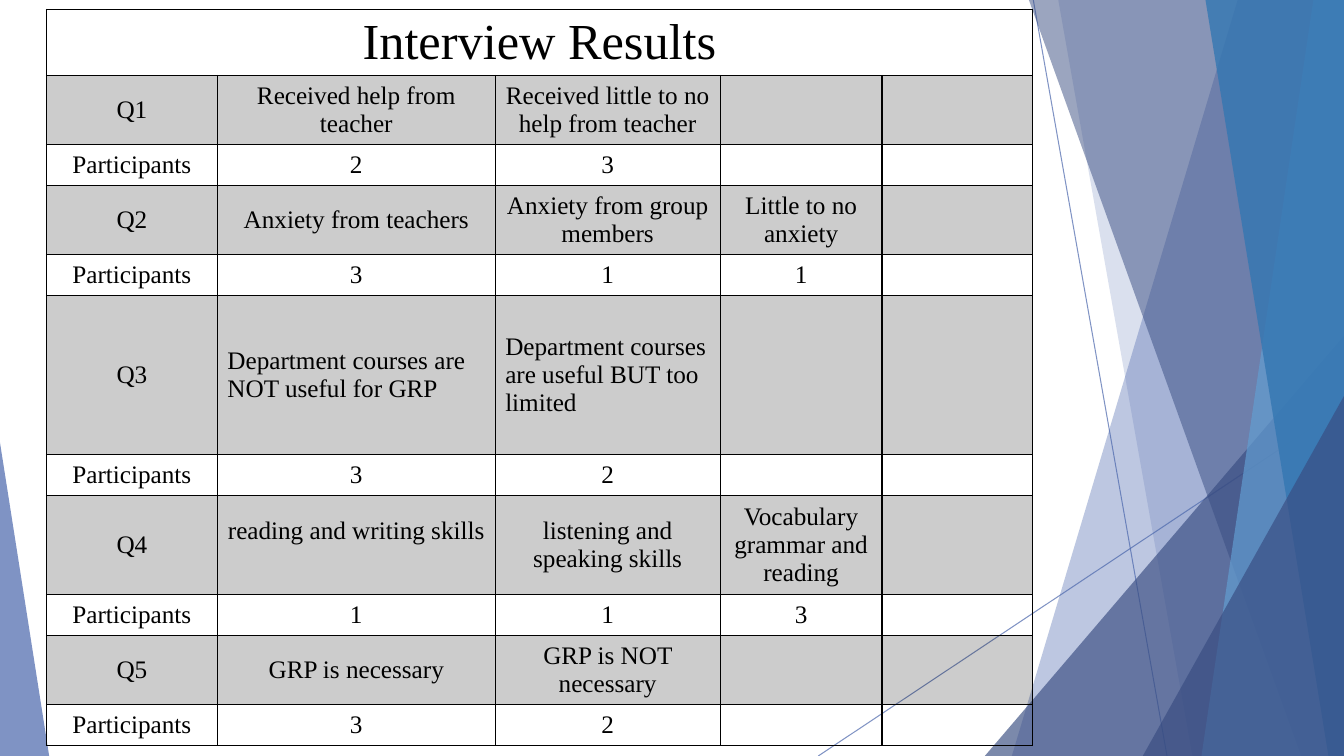
from dataclasses import dataclass

from lxml.etree import SubElement
from pptx import Presentation
from pptx.dml.color import RGBColor
from pptx.enum.shapes import MSO_CONNECTOR as Connector
from pptx.enum.shapes import MSO_SHAPE as Preset
from pptx.enum.text import MSO_ANCHOR as Anchor
from pptx.enum.text import PP_ALIGN as Align
from pptx.oxml import parse_xml
from pptx.oxml.ns import nsdecls, qn
from pptx.util import Cm, Pt

WIDTH, HEIGHT = 33.87, 19.05
BLUE, NAVY, SKY, OCEAN, BLACK = "4A66AC", "384C81", "629DD1", "3477B2", "000000"
FONT = "Times New Roman"


@dataclass
class Ray:
    start: tuple[float, float]
    end: tuple[float, float]


@dataclass
class Shard:
    top: float
    bottom: float
    colour: str
    opacity: int


@dataclass
class Peak:
    left: float
    top: float
    width: float
    apex: float
    colour: str
    opacity: int


@dataclass
class Question:
    height: float
    answers: dict[str, int]
    align: Align = Align.CENTER


RAYS = [Ray((26.04, 0), (29.41, HEIGHT)), Ray((WIDTH, 10.24), (20.62, HEIGHT))]

FACETS = [
    Shard(31.19, 25.5, BLUE, 36),
    Shard(26.67, 30.05, BLUE, 20),
    Peak(24.82, 8.46, 9.05, 1, NAVY, 66),
    Shard(25.93, 32.79, NAVY, 50),
    Shard(33.1, 30.28, SKY, 70),
    Shard(30.38, 33.48, OCEAN, 80),
    Peak(28.8, 9.98, 5.07, 1, NAVY, 66),
    Peak(0, 11.15, 1.24, 0, BLUE, 70),
]

COLUMN_WIDTHS = [4.31, 7.0, 5.67, 4.08, 3.8]
TITLE_HEIGHT, COUNT_HEIGHT = 1.66, 1.0
QUESTIONS = [
    Question(1.74, {"Received help from teacher": 2,
                    "Received little to no help from teacher": 3}),
    Question(1.74, {"Anxiety from teachers": 3, "Anxiety from group members": 1,
                    "Little to no anxiety": 1}),
    Question(4.01, {"Department courses are NOT useful for GRP": 3,
                    "Department courses are useful BUT too limited": 2}, Align.LEFT),
    Question(2.51, {"reading and writing skills": 1, "listening and speaking skills": 1,
                    "Vocabulary grammar and reading": 3}),
    Question(1.74, {"GRP is necessary": 3, "GRP is NOT necessary": 2}),
]


def rgb(colour: str) -> RGBColor:
    return RGBColor.from_string(colour)


def set_opacity(element, percent: int) -> None:
    for colour in element.iter(qn("a:srgbClr")):
        SubElement(colour, qn("a:alpha"), val=str(percent * 1000))


def draw_ray(page, ray: Ray) -> None:
    line = page.shapes.add_connector(
        Connector.STRAIGHT, *(Cm(value) for value in ray.start + ray.end))
    line.line.color.rgb = rgb(BLUE)
    line.line.width = Pt(0.75)
    properties = line._element.spPr
    set_opacity(properties, 70)
    SubElement(properties, qn("a:effectLst"))


def draw_facet(page, facet: Shard | Peak) -> None:
    if isinstance(facet, Shard):
        builder = page.shapes.build_freeform(Cm(facet.top), 0)
        corners = [(WIDTH, 0), (WIDTH, HEIGHT), (facet.bottom, HEIGHT)]
        builder.add_line_segments([(Cm(x), Cm(y)) for x, y in corners], close=True)
        shape = builder.convert_to_shape()
    else:
        shape = page.shapes.add_shape(
            Preset.ISOSCELES_TRIANGLE, Cm(facet.left), Cm(facet.top),
            Cm(facet.width), Cm(HEIGHT - facet.top))
        shape.adjustments[0] = facet.apex
    shape.shadow.inherit = False
    shape.fill.solid()
    shape.fill.fore_color.rgb = rgb(facet.colour)
    shape.line.fill.background()
    set_opacity(shape._element.spPr, facet.opacity)


def format_cell(cell, shaded: bool) -> None:
    properties = cell._tc.get_or_add_tcPr()
    if shaded:
        cell.fill.solid()
        cell.fill.fore_color.rgb = rgb(BLACK)
        set_opacity(properties, 20)
    else:
        cell.fill.background()
    for index, side in enumerate("LRTB"):
        properties.insert(index, parse_xml(
            f'<a:ln{side} {nsdecls("a")} w="12700"><a:solidFill>'
            f'<a:srgbClr val="{BLACK}"/></a:solidFill></a:ln{side}>'))
    cell.vertical_anchor = Anchor.MIDDLE


def write_cell(cell, text: str, size: int = 18, align: Align = Align.CENTER) -> None:
    para = cell.text_frame.paragraphs[0]
    para.alignment = align
    span = para.add_run()
    span.text = text
    span.font.color.rgb = rgb(BLACK)
    values = {"name": FONT, "size": Pt(size), "bold": False}
    for name, value in values.items():
        setattr(span.font, name, value)


def draw_results(page) -> None:
    heights = [TITLE_HEIGHT]
    for question in QUESTIONS:
        heights += [question.height, COUNT_HEIGHT]
    table = page.shapes.add_table(
        len(heights), len(COLUMN_WIDTHS), Cm(1.17), Cm(0.24),
        Cm(sum(COLUMN_WIDTHS)), Cm(sum(heights))).table
    for name in ("first_row", "horz_banding"):
        setattr(table, name, False)
    for column, width in zip(table.columns, COLUMN_WIDTHS):
        column.width = Cm(width)
    for index, (row, height) in enumerate(zip(table.rows, heights)):
        row.height = Cm(height)
        for cell in row.cells:
            format_cell(cell, shaded=index % 2 == 1)

    title = table.cell(0, 0)
    title.merge(table.cell(0, len(COLUMN_WIDTHS) - 1))
    write_cell(title, "Interview Results", size=36)
    for number, question in enumerate(QUESTIONS, 1):
        row = 2 * number - 1
        write_cell(table.cell(row, 0), f"Q{number}")
        write_cell(table.cell(row + 1, 0), "Participants")
        for column, (answer, count) in enumerate(question.answers.items(), 1):
            write_cell(table.cell(row, column), answer, align=question.align)
            write_cell(table.cell(row + 1, column), str(count))
    table.cell(7, 1).margin_bottom = Cm(0.83)


def main() -> None:
    deck = Presentation()
    deck.slide_width, deck.slide_height = Cm(WIDTH), Cm(HEIGHT)
    page = deck.slides.add_slide(deck.slide_layouts[6])
    for ray in RAYS:
        draw_ray(page, ray)
    for facet in FACETS:
        draw_facet(page, facet)
    draw_results(page)
    deck.save("out.pptx")


if __name__ == "__main__":
    main()
